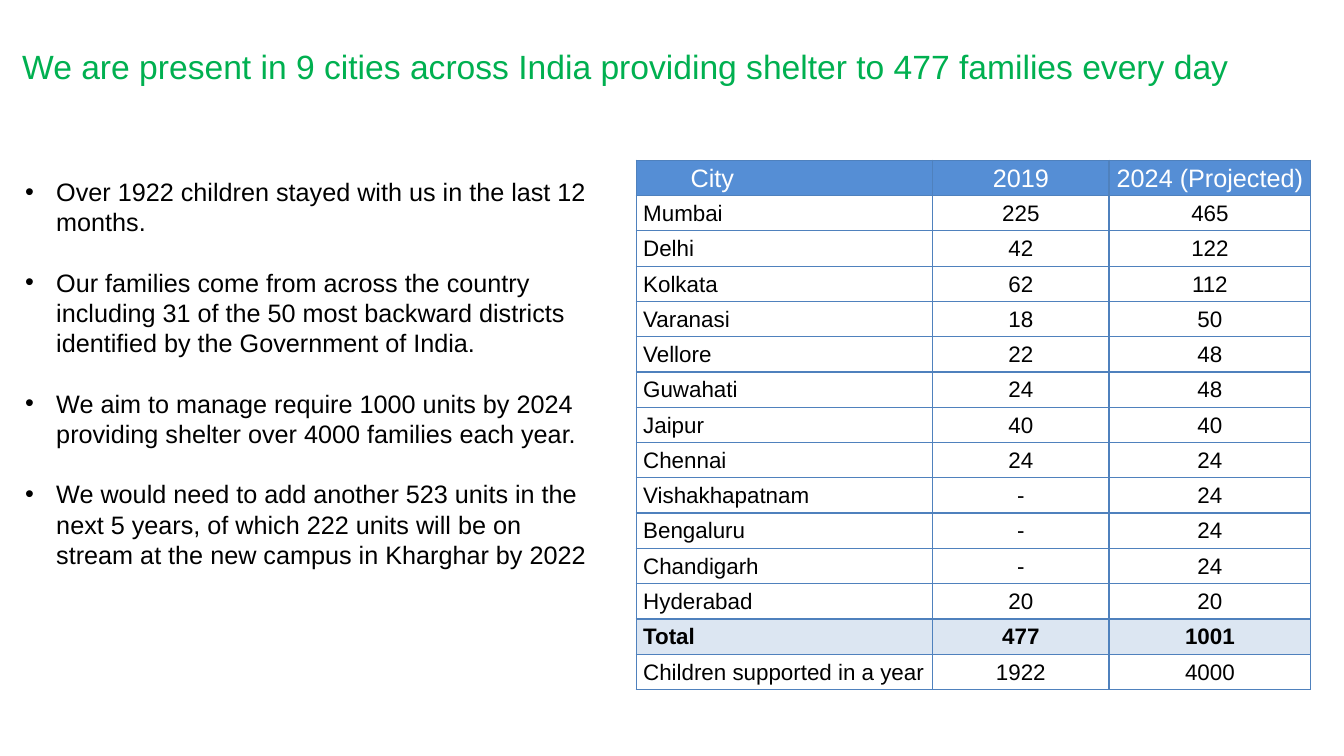
from lxml.etree import SubElement
from pptx import Presentation
from pptx.dml.color import RGBColor
from pptx.enum.text import MSO_ANCHOR, PP_ALIGN
from pptx.oxml.ns import qn
from pptx.util import Inches, Pt

TITLE = "We are present in 9 cities across India providing shelter to 477 families every day"
POINTS = [
    "Over 1922 children stayed with us in the last 12 months.",
    "Our families come from across the country including 31 of the 50 most backward "
    "districts identified by the Government of India.",
    "We aim to manage require 1000 units by 2024 providing shelter over 4000 families each year.",
    "We would need to add another 523 units in the next 5 years, of which 222 units will be on "
    "stream at the new campus in Kharghar by 2022",
]
CITIES = [
    ("City", "2019", "2024 (Projected)"),
    ("Mumbai", "225", "465"),
    ("Delhi", "42", "122"),
    ("Kolkata", "62", "112"),
    ("Varanasi", "18", "50"),
    ("Vellore", "22", "48"),
    ("Guwahati", "24", "48"),
    ("Jaipur", "40", "40"),
    ("Chennai", "24", "24"),
    ("Vishakhapatnam", "-", "24"),
    ("Bengaluru", "-", "24"),
    ("Chandigarh", "-", "24"),
    ("Hyderabad", "20", "20"),
    ("Total", "477", "1001"),
    ("Children supported in a year", "1922", "4000"),
]
COLUMN_WIDTHS = (2.94, 1.75, 2)
ROW_HEIGHT = 0.35
LINE_PITCH = 21.6
COLORS = {
    "title": "00B050", "text": "000000", "white": "FFFFFF",
    "header": "558ED5", "total": "DCE6F2", "border": "4F81BD",
}


def color(name):
    return RGBColor.from_string(COLORS[name])


def write(para, text, size=18, ink="text", bold=False, align=PP_ALIGN.LEFT):
    para.alignment = align
    span = para.add_run()
    span.text = text
    span.font.name = "Arial"
    span.font.size = Pt(size)
    span.font.bold = bold
    span.font.color.rgb = color(ink)


def add_bullet(para):
    properties = para._p.get_or_add_pPr()
    properties.set("marL", str(Inches(0.31)))
    properties.set("indent", str(-Inches(0.31)))
    SubElement(properties, qn("a:buFont"), typeface="Arial")
    SubElement(properties, qn("a:buChar"), char="•")


def style_cell(cell, fill, left):
    cell.margin_left = Inches(left)
    cell.margin_right = cell.margin_top = Inches(0.01)
    cell.margin_bottom = 0
    cell.vertical_anchor = MSO_ANCHOR.MIDDLE
    properties = cell._tc.get_or_add_tcPr()
    for side in ("lnL", "lnR", "lnT", "lnB"):
        line = SubElement(properties, qn("a:" + side), w=str(Pt(1)))
        paint = SubElement(line, qn("a:solidFill"))
        SubElement(paint, qn("a:srgbClr"), val=COLORS["border"])
    cell.fill.solid()
    cell.fill.fore_color.rgb = color(fill)


def add_title(page):
    title = page.shapes.title
    title.left, title.top = Inches(0.12), Inches(0.29)
    title.width, title.height = Inches(13.19), Inches(0.68)
    frame = title.text_frame
    frame.word_wrap = True
    frame.vertical_anchor = MSO_ANCHOR.MIDDLE
    para = frame.paragraphs[0]
    para.line_spacing = 1.14
    write(para, TITLE, size=24, ink="title")


def add_points(page):
    box = page.shapes.add_textbox(Inches(0.15), Inches(1.7), Inches(5.9), Inches(4.1))
    frame = box.text_frame
    frame.word_wrap = True
    for index, point in enumerate(POINTS):
        para = frame.add_paragraph() if index else frame.paragraphs[0]
        add_bullet(para)
        para.line_spacing = Pt(LINE_PITCH)
        if index:
            para.space_before = Pt(LINE_PITCH)
        write(para, point)


def add_cities(page):
    table = page.shapes.add_table(
        len(CITIES), len(COLUMN_WIDTHS), Inches(6.31), Inches(1.59),
        Inches(sum(COLUMN_WIDTHS)), Inches(ROW_HEIGHT * len(CITIES))).table
    table.horz_banding = False
    for column, width in zip(table.columns, COLUMN_WIDTHS):
        column.width = Inches(width)
    for row, values in enumerate(CITIES):
        table.rows[row].height = Inches(ROW_HEIGHT)
        header, total = row == 0, values[0] == "Total"
        fill = "header" if header else "total" if total else "white"
        for column, value in enumerate(values):
            cell = table.cell(row, column)
            left = 0.01 if column else 0.54 if header else 0.07
            style_cell(cell, fill, left)
            write(cell.text_frame.paragraphs[0], value,
                  size=18 if header else 16,
                  ink="white" if header else "text", bold=total,
                  align=PP_ALIGN.CENTER if column else PP_ALIGN.LEFT)


def main():
    deck = Presentation()
    deck.slide_width, deck.slide_height = Inches(13.33), Inches(7.5)
    page = deck.slides.add_slide(deck.slide_layouts[5])
    add_title(page)
    add_points(page)
    add_cities(page)
    deck.save("out.pptx")


if __name__ == "__main__":
    main()
